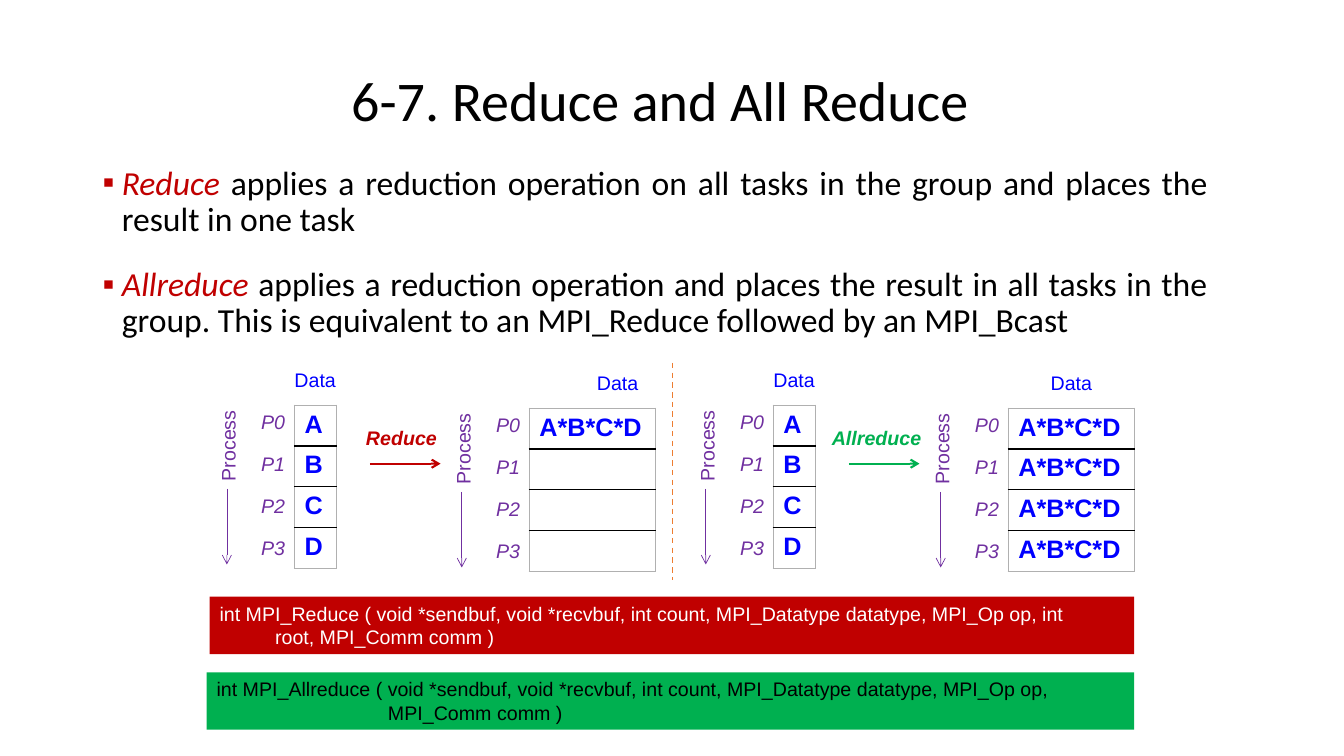
from lxml.etree import SubElement as Sub
from pptx import Presentation as Deck
from pptx.dml.color import RGBColor as RGB
from pptx.enum.dml import MSO_LINE as Dash
from pptx.enum.shapes import MSO_CONNECTOR as Link, MSO_SHAPE as Shape
from pptx.enum.text import MSO_ANCHOR as Anchor, MSO_AUTO_SIZE as Fit, PP_ALIGN as Align
from pptx.oxml.ns import qn
from pptx.util import Inches, Pt

HUES = {"black": "000000", "white": "FFFFFF", "red": "C00000", "green": "00B050",
        "blue": "0000FF", "purple": "7030A0", "orange": "ED7D31", "gray": "B0B0B0"}
STEP = 1.25 / 3
ROW = 0.405


def hue(name):
    return RGB.from_string(HUES[name])


def write(para, text, font="Arial", size=14, color="black", bold=False, slant=False):
    run = para.add_run()
    run.text = text
    run.font.name = font
    run.font.size = Pt(size)
    run.font.bold = bold
    run.font.italic = slant
    run.font.color.rgb = hue(color)


class Page:
    """Holds the style and the current slide, and draws each kind of element."""

    def __init__(self, deck):
        self.slide = deck.slides.add_slide(deck.slide_layouts[5])
        self.shapes = self.slide.shapes
        self.main = {"font": "Calibri", "size": 24}

    def title(self, text, x, y, w, h):
        box = self.shapes.title
        box.left, box.top, box.width, box.height = map(Inches, (x, y, w, h))
        frame = box.text_frame
        frame.vertical_anchor = Anchor.MIDDLE
        para = frame.paragraphs[0]
        para.alignment = Align.CENTER
        para.line_spacing = 0.9
        write(para, text, font="Calibri", size=40)

    def points(self, items, x, y, w, h):
        frame = self.shapes.add_textbox(*map(Inches, (x, y, w, h))).text_frame
        frame.word_wrap = True
        for i, (term, rest) in enumerate(items):
            para = frame.add_paragraph() if i else frame.paragraphs[0]
            para.alignment = Align.JUSTIFY
            para.line_spacing = 0.9
            if i:
                para.space_before = Pt(20.5)
            props = para._p.get_or_add_pPr()
            props.set("marL", str(Inches(0.19)))
            props.set("indent", str(-Inches(0.19)))
            Sub(props, qn("a:buFont"), typeface="Arial")
            Sub(props, qn("a:buChar"), char="▪")
            write(para, term + " ", color="red", slant=True, **self.main)
            write(para, rest, **self.main)

    def label(self, text, x, y, w, turn=0, **style):
        box = self.shapes.add_textbox(*map(Inches, (x, y, w, 0.34)))
        box.rotation = turn
        frame = box.text_frame
        frame.word_wrap = False
        frame.auto_size = Fit.SHAPE_TO_FIT_TEXT
        frame.margin_left = frame.margin_right = 0
        if turn:
            frame.vertical_anchor = Anchor.BOTTOM
        write(frame.paragraphs[0], text, **style)

    def line(self, x, y, dx, dy, color, width, arrow=True):
        line = self.shapes.add_connector(
            Link.STRAIGHT, *map(Inches, (x, y, x + dx, y + dy)))
        line.line.color.rgb = hue(color)
        line.line.width = Pt(width)
        if arrow:
            Sub(line.line._get_or_add_ln(), qn("a:tailEnd"), type="arrow")
        else:
            line.line.dash_style = Dash.DASH
        Sub(line._element.spPr, qn("a:effectLst"))

    def table(self, cells, x, y, w):
        size = map(Inches, (x, y, w, ROW * len(cells)))
        grid = self.shapes.add_table(len(cells), 1, *size).table
        grid.first_row = grid.horz_banding = False
        last = len(cells) - 1
        for i, text in enumerate(cells):
            grid.rows[i].height = Inches(ROW)
            cell = grid.cell(i, 0)
            props = cell._tc.get_or_add_tcPr()
            for side in "LRTB":
                inner = (side == "T" and i > 0) or (side == "B" and i < last)
                color = HUES["black" if inner else "gray"]
                edge = Sub(props, qn("a:ln" + side), w=str(Pt(1)))
                Sub(Sub(edge, qn("a:solidFill")), qn("a:srgbClr"), val=color)
            cell.fill.background()
            if text:
                write(cell.text_frame.paragraphs[0], text, size=18, color="blue", bold=True)

    def panel(self, cells, x, y, w, head):
        self.table(cells, x + 0.67, y, w)
        for i in range(len(cells)):
            self.label(f"P{i}", x + 0.34, y + STEP * i, 0.24, color="purple", slant=True)
        self.label("Data", x + head, y - 0.42, 0.42, color="blue")
        self.line(x, y + 0.83, 0, 0.75, "purple", 0.5)
        self.label("Process", x - 0.35, y + 0.23, 0.71, turn=270, color="purple")

    def code(self, lines, x, y, w, fill, color, indent):
        box = self.shapes.add_shape(Shape.RECTANGLE, *map(Inches, (x, y, w, 0.57)))
        box.shadow.inherit = False
        box.fill.solid()
        box.fill.fore_color.rgb = hue(fill)
        box.line.fill.background()
        frame = box.text_frame
        frame.word_wrap = True
        frame.vertical_anchor = Anchor.TOP
        for i, text in enumerate(lines):
            para = frame.add_paragraph() if i else frame.paragraphs[0]
            para.alignment = Align.LEFT
            if i:
                para._p.get_or_add_pPr().set("marL", str(Inches(indent)))
            write(para, text, color=color)


def main():
    deck = Deck()
    deck.slide_width, deck.slide_height = Inches(13.33), Inches(7.5)
    page = Page(deck)
    page.title("6-7. Reduce and All Reduce", 1.92, 0.3, 9.25, 1.45)
    page.points([
        ("Reduce", "applies a reduction operation on all tasks in the group "
                   "and places the result in one task"),
        ("Allreduce", "applies a reduction operation and places the result in all tasks "
                      "in the group. This is equivalent to an MPI_Reduce followed by "
                      "an MPI_Bcast"),
    ], 0.92, 1.6, 11.16, 4.95)

    total = "A*B*C*D"
    flows = [
        (2.25, "Reduce", 3.63, 0.71, "red", [total, "", "", ""], 1.34),
        (7, "Allreduce", 8.25, 0.89, "green", [total] * 4, 1.09),
    ]
    for x, name, left, width, color, result, head in flows:
        page.panel("ABCD", x, 4.02, 0.42, 0.67)
        page.line(x + 1.42, 4.6, 0.7, 0, color, 1.5)
        page.label(name, left, 4.18, width, color=color, bold=True, slant=True)
        page.panel(result, x + 2.33, 4.05, 1.25, head)
    page.line(6.67, 3.6, 0, 2.15, "orange", 1, arrow=False)

    page.code(["int MPI_Reduce ( void *sendbuf, void *recvbuf, int count, "
               "MPI_Datatype datatype, MPI_Op op, int",
               "root, MPI_Comm comm )"], 2.08, 5.92, 9.17, "red", "white", 0.55)
    page.code(["int MPI_Allreduce ( void *sendbuf, void *recvbuf, int count, "
               "MPI_Datatype datatype, MPI_Op op,",
               "MPI_Comm comm )"], 2.05, 6.67, 9.2, "green", "black", 1.7)
    deck.save("out.pptx")


if __name__ == "__main__":
    main()
